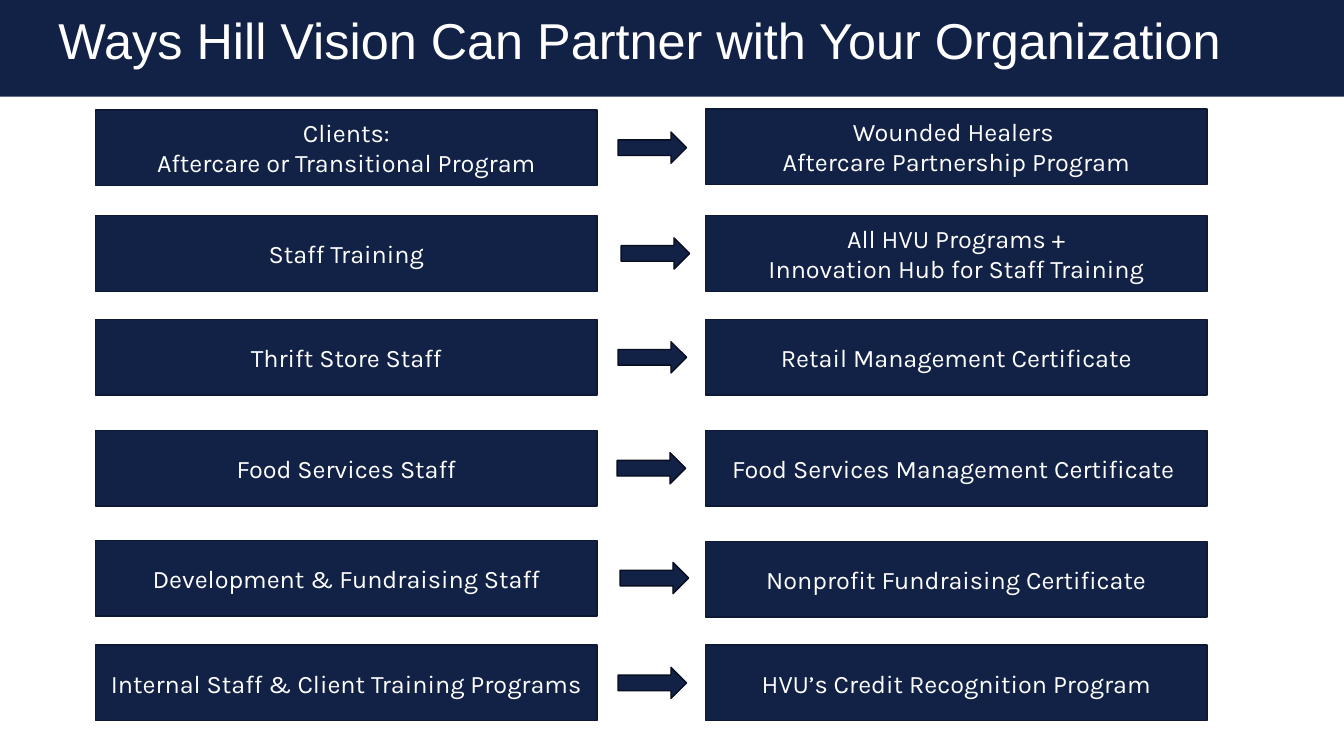
import pptx
import pptx.util
import pptx.dml.color
import pptx.enum.shapes
import pptx.enum.text

Inches = pptx.util.Inches
Pt = pptx.util.Pt
SHAPES = pptx.enum.shapes.MSO_SHAPE
ALIGN = pptx.enum.text.PP_ALIGN
ANCHOR = pptx.enum.text.MSO_ANCHOR

# Content: audience, offering, audience top, offering top, arrow left
TITLE = "Ways Hill Vision Can Partner with Your Organization"
PARTNERSHIPS = [
    ("Clients:\vAftercare or Transitional Program",
     "Wounded Healers \nAftercare Partnership Program", 1.09, 1.08, 6.13),
    ("Staff Training",
     "All HVU Programs +\vInnovation Hub for Staff Training", 2.14, 2.14, 6.16),
    ("Thrift Store Staff",
     "Retail Management Certificate", 3.17, 3.17, 6.13),
    ("Food Services Staff",
     "Food Services Management Certificate ", 4.27, 4.27, 6.12),
    ("Development & Fundraising Staff",
     "Nonprofit Fundraising Certificate", 5.36, 5.37, 6.15),
    ("Internal Staff & Client Training Programs",
     "HVU’s Credit Recognition Program", 6.4, 6.4, 6.13),
]

NAVY, BOX_EDGE, ARROW_EDGE, WHITE = "122146", "0D1834", "080E1F", "FFFFFF"
AUDIENCE_LEFT, OFFERING_LEFT = 0.95, 7
BOX_WIDTH, BOX_HEIGHT = 4.97, 0.75
ARROW_WIDTH, ARROW_HEIGHT = 0.68, 0.31


def color(value):
    return pptx.dml.color.RGBColor.from_string(value)


def add_navy_shape(kind, left, top, width, height, edge=None):
    shape = page.shapes.add_shape(
        kind, Inches(left), Inches(top), Inches(width), Inches(height))
    shape.shadow.inherit = False
    shape.fill.solid()
    shape.fill.fore_color.rgb = color(NAVY)
    if edge:
        shape.line.color.rgb = color(edge)
        shape.line.width = Pt(1)
    else:
        shape.line.fill.background()
    return shape


def format_text(frame, font_name, size, alignment, anchor):
    frame.word_wrap = True
    frame.vertical_anchor = anchor
    for paragraph in frame.paragraphs:
        paragraph.alignment = alignment
        for span in paragraph.runs:
            span.font.name = font_name
            span.font.size = Pt(size)
            span.font.color.rgb = color(WHITE)


def add_label_box(text, left, top):
    box = add_navy_shape(SHAPES.RECTANGLE, left, top,
                         BOX_WIDTH, BOX_HEIGHT, BOX_EDGE)
    box.text_frame.text = text
    format_text(box.text_frame, "Karla", 18, ALIGN.CENTER, ANCHOR.MIDDLE)


deck = pptx.Presentation()
deck.slide_width, deck.slide_height = Inches(13.33), Inches(7.5)
page = deck.slides.add_slide(deck.slide_layouts.get_by_name("Title Only"))

# Title on its band
title = page.shapes.title
title.left, title.top = Inches(0.48), Inches(0.11)
title.width, title.height = Inches(12.26), Inches(0.74)
title.text_frame.text = TITLE
title.text_frame.auto_size = pptx.enum.text.MSO_AUTO_SIZE.NONE
title.text_frame.paragraphs[0].line_spacing = 0.9
format_text(title.text_frame, "Arial", 36, ALIGN.LEFT, ANCHOR.TOP)
band = add_navy_shape(SHAPES.RECTANGLE, 0, 0, 13.33, 0.96)
title.element.addprevious(band.element)

# Each audience points to its offering
for audience, offering, audience_top, offering_top, arrow_left in PARTNERSHIPS:
    add_label_box(audience, AUDIENCE_LEFT, audience_top)
    add_label_box(offering, OFFERING_LEFT, offering_top)
    arrow_top = audience_top + (BOX_HEIGHT - ARROW_HEIGHT) / 2
    add_navy_shape(SHAPES.RIGHT_ARROW, arrow_left, arrow_top,
                   ARROW_WIDTH, ARROW_HEIGHT, ARROW_EDGE)

deck.save("out.pptx")
